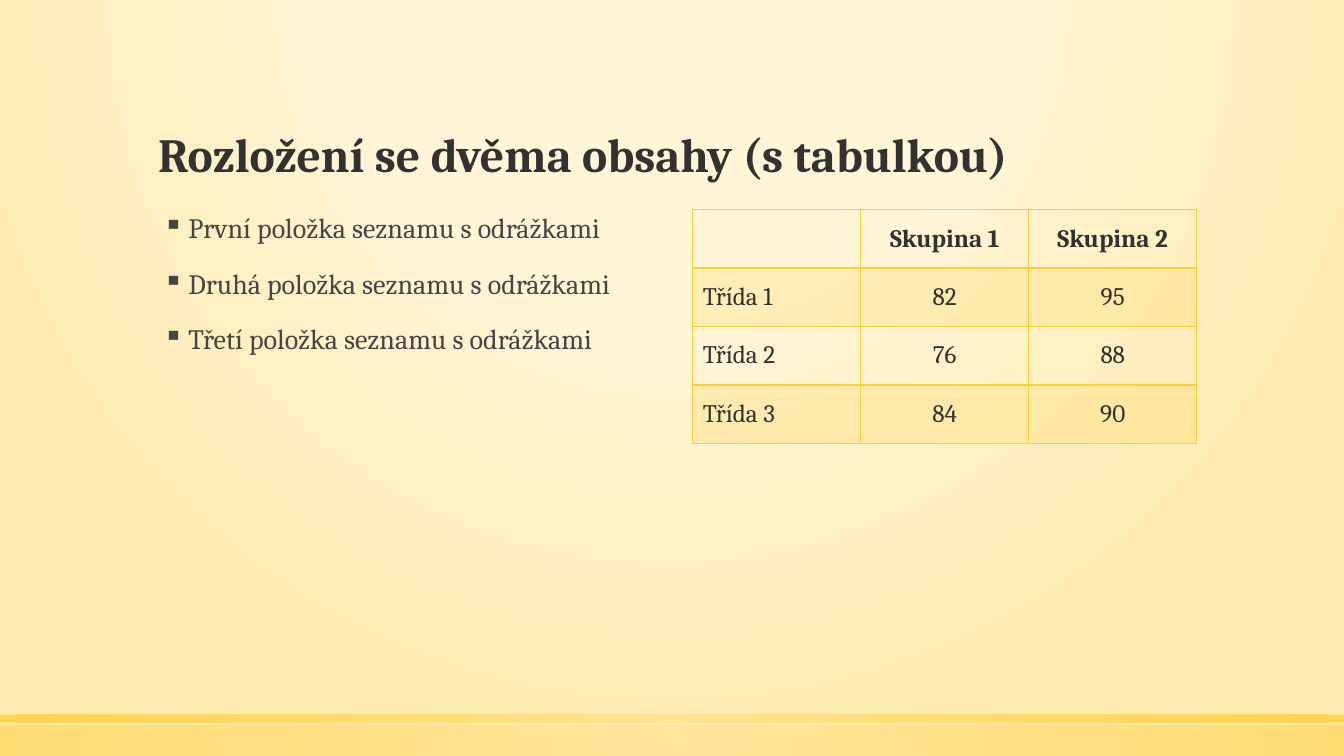
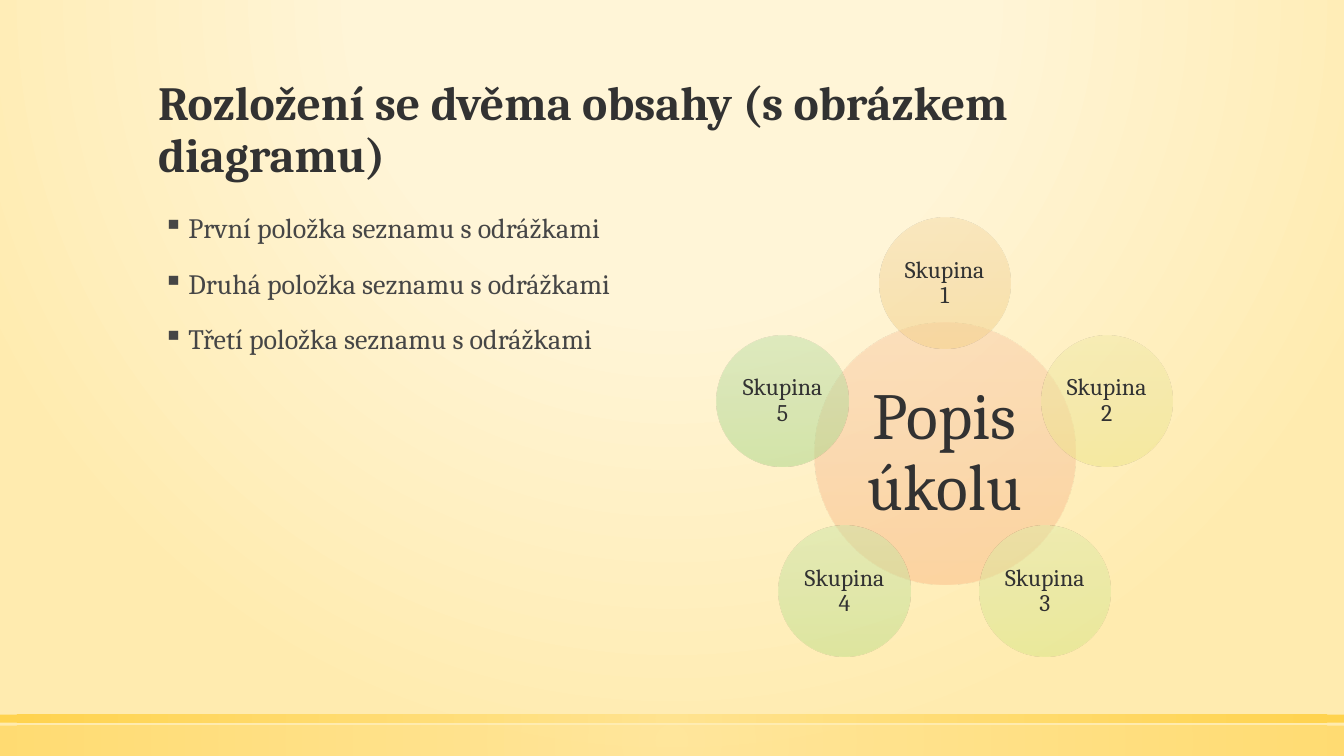
from dataclasses import dataclass
from math import cos, radians, sin

from lxml.etree import SubElement
from pptx import Presentation
from pptx.dml.color import RGBColor
from pptx.enum.shapes import MSO_SHAPE as Preset
from pptx.enum.text import MSO_ANCHOR as Anchor, PP_ALIGN as Align
from pptx.oxml import parse_xml
from pptx.oxml.ns import nsdecls, qn
from pptx.util import Inches, Pt

FONT = "Cambria"
COLORS = {
    "heading": "323232",
    "body": "464646",
    "gold": "FFCD36",
    "pale_gold": "FFE186",
    "cream": "FFF5D7",
    "sand": "FFEBAF",
}
WIDTH, HEIGHT = 13.33, 7.5
LEFT, CONTENT_TOP, COLUMN_WIDTH = 1.47, 2.08, 5
TABLE_LEFT, ROW_HEIGHT = 6.87, 0.58
BULLETS = [f"{order} položka seznamu s odrážkami" for order in ("První", "Druhá", "Třetí")]
SCORES = [
    ("", "Skupina 1", "Skupina 2"),
    ("Třída 1", "82", "95"),
    ("Třída 2", "76", "88"),
    ("Třída 3", "84", "90"),
]


@dataclass(frozen=True)
class Stop:
    position: int
    color: str
    opacity: int = 100


@dataclass(frozen=True)
class Band:
    top: float
    height: float
    opacity: int


@dataclass(frozen=True)
class Bubble:
    label: str
    x: float
    y: float
    diameter: float
    tints: tuple[str, str, str]
    size: int
    inset: float


BANDS = [Band(7.2, 0.3, 50), Band(7.09, 0.08, 80)]
BACKDROP = [Stop(0, COLORS["cream"], 59), Stop(40, COLORS["cream"], 66), Stop(100, COLORS["sand"])]

# Radial diagram: a hub with groups placed clockwise from the top
HUB = Bubble("Popis úkolu", 9.37, 4.5, 2.59, ("FACDA9", "F8C39A", "FBBB87"), 47, 0.07)
ORBIT = 1.69
GROUP_TINTS = [
    ("F6DBA8", "F3D49A", "F5D187"),
    ("F1EAA8", "EDE59A", "EEE587"),
    ("E0EBA8", "DAE79A", "D8E787"),
    ("CDE6A8", "C5E19A", "BEE088"),
    ("BFE0A9", "B4DA9B", "A9D889"),
]


def apply_gradient(owner, fill, stops: list[Stop], focus: tuple | None = None) -> None:
    """Fill with a circular gradient around focus, or a vertical one without it."""
    fill.gradient()
    gradient = owner.element.xpath(".//a:gradFill")[0]
    del gradient[:]
    stop_list = SubElement(gradient, qn("a:gsLst"))
    for stop in stops:
        mark = SubElement(stop_list, qn("a:gs"), pos=str(stop.position * 1000))
        color = SubElement(mark, qn("a:srgbClr"), val=stop.color)
        if stop.opacity < 100:
            SubElement(color, qn("a:alpha"), val=str(stop.opacity * 1000))
    if focus:
        circle = SubElement(gradient, qn("a:path"), path="circle")
        edges = {side: str(value * 1000) for side, value in zip("ltrb", focus)}
        SubElement(circle, qn("a:fillToRect"), **edges)
    else:
        SubElement(gradient, qn("a:lin"), ang="5400000", scaled="0")


def write_text(frame, *lines: str, size: float, color: str = "heading", bold: bool = False,
               align=Align.LEFT, anchor=Anchor.TOP, spacing: float = 0.9,
               before: float = 0, bullet: str = "") -> None:
    frame.word_wrap = True
    frame.vertical_anchor = anchor
    for index, line in enumerate(lines):
        paragraph = frame.add_paragraph() if index else frame.paragraphs[0]
        paragraph.alignment = align
        paragraph.line_spacing = spacing
        paragraph.space_before = Pt(before)
        run = paragraph.add_run()
        run.text = line
        run.font.name = FONT
        run.font.size = Pt(size)
        run.font.bold = bold
        run.font.color.rgb = RGBColor.from_string(COLORS[color])
        if bullet:
            properties = paragraph._p.get_or_add_pPr()
            properties.set("marL", str(Inches(0.3)))
            properties.set("indent", str(Inches(-0.25)))
            SubElement(properties, qn("a:buChar"), char=bullet)


def add_plain_shape(slide, preset, left: float, top: float, width: float, height: float):
    shape = slide.shapes.add_shape(preset, Inches(left), Inches(top), Inches(width), Inches(height))
    shape.shadow.inherit = False
    shape.line.fill.background()
    return shape


def add_text_box(slide, left: float, top: float, width: float, height: float):
    return slide.shapes.add_textbox(
        Inches(left), Inches(top), Inches(width), Inches(height)).text_frame


def add_base_slide(deck, title: str):
    """Start a slide with the shared backdrop, bands, title and bullets."""
    slide = deck.slides.add_slide(deck.slide_layouts[6])
    apply_gradient(slide, slide.background.fill, BACKDROP, (50, -80, 50, 180))
    for band in BANDS:
        strip = add_plain_shape(slide, Preset.RECTANGLE, 0, band.top, WIDTH, band.height)
        stops = [Stop(0, COLORS["pale_gold"], band.opacity), Stop(100, COLORS["gold"], band.opacity)]
        apply_gradient(strip, strip.fill, stops, (50, 50, 50, 50))
    write_text(add_text_box(slide, LEFT, 0.51, 10.4, 1.35), title,
               size=34, bold=True, anchor=Anchor.BOTTOM)
    write_text(add_text_box(slide, LEFT, CONTENT_TOP, COLUMN_WIDTH, 4.51), *BULLETS,
               size=20, color="body", before=18, bullet="▪")
    return slide


def style_cell(cell, row: int) -> None:
    """Draw gold borders, heavier under the header, and shade odd rows."""
    properties = cell._tc.get_or_add_tcPr()
    widths = {"L": 1, "R": 1, "T": 2 if row == 1 else 1, "B": 2 if row == 0 else 1}
    for side, points in widths.items():
        properties.append(parse_xml(
            f'<a:ln{side} {nsdecls("a")} w="{Pt(points)}"><a:solidFill>'
            f'<a:srgbClr val="{COLORS["gold"]}"/></a:solidFill></a:ln{side}>'))
    if row % 2:
        cell.fill.solid()
        cell.fill.fore_color.rgb = RGBColor.from_string(COLORS["gold"])
        SubElement(properties.xpath("./a:solidFill/a:srgbClr")[0], qn("a:alpha"), val="20000")
    else:
        cell.fill.background()


def add_score_table(slide) -> None:
    rows, columns = len(SCORES), len(SCORES[0])
    table = slide.shapes.add_table(
        rows, columns, Inches(TABLE_LEFT), Inches(CONTENT_TOP),
        Inches(COLUMN_WIDTH), Inches(rows * ROW_HEIGHT)).table
    table.horz_banding = False
    for row, values in enumerate(SCORES):
        for column, value in enumerate(values):
            cell = table.cell(row, column)
            style_cell(cell, row)
            cell.vertical_anchor = Anchor.MIDDLE
            if value:
                write_text(cell.text_frame, value, size=18, bold=row == 0, spacing=1.0,
                           align=Align.CENTER if column else Align.LEFT, anchor=Anchor.MIDDLE)


def add_bubble(slide, bubble: Bubble) -> None:
    radius = bubble.diameter / 2
    circle = add_plain_shape(slide, Preset.OVAL, bubble.x - radius, bubble.y - radius,
                             bubble.diameter, bubble.diameter)
    stops = [Stop(position, tint, 50) for position, tint in zip((0, 50, 100), bubble.tints)]
    apply_gradient(circle, circle.fill, stops)
    frame = circle.text_frame
    frame.margin_left = frame.margin_right = Inches(bubble.inset)
    frame.margin_top = frame.margin_bottom = Inches(bubble.inset)
    write_text(frame, bubble.label, size=bubble.size, align=Align.CENTER, anchor=Anchor.MIDDLE)


def add_radial_diagram(slide) -> None:
    add_bubble(slide, HUB)
    for index, tints in enumerate(GROUP_TINTS):
        angle = radians(index * 360 / len(GROUP_TINTS))
        add_bubble(slide, Bubble(f"Skupina {index + 1}", HUB.x + ORBIT * sin(angle),
                                 HUB.y - ORBIT * cos(angle), 1.3, tints, 17, 0.02))


def main() -> None:
    deck = Presentation()
    deck.slide_width, deck.slide_height = Inches(WIDTH), Inches(HEIGHT)
    add_score_table(add_base_slide(deck, "Rozložení se dvěma obsahy (s tabulkou)"))
    add_radial_diagram(add_base_slide(deck, "Rozložení se dvěma obsahy (s obrázkem diagramu)"))
    deck.save("out.pptx")


if __name__ == "__main__":
    main()
